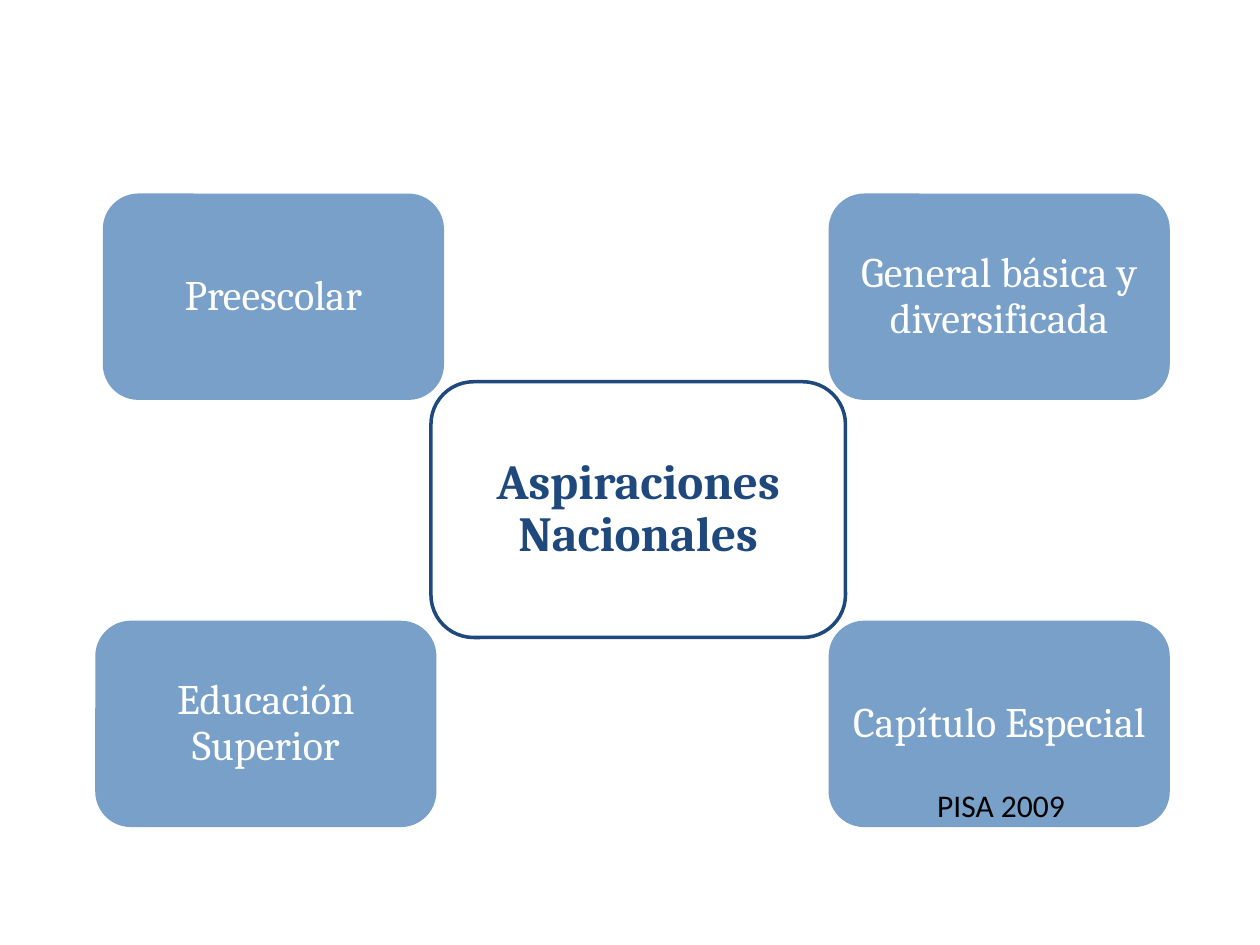
from pptx import Presentation
from pptx.dml.color import RGBColor
from pptx.enum import shapes, text
from pptx.util import Inches, Pt

COLORS = {"blue": "78A0C8", "navy": "1F497D", "white": "FFFFFF", "black": "000000"}
SIDE = {"size": (2.68, 1.61), "fill": "blue", "line": "blue", "inset": 0.1,
        "font": {"name": "Cambria", "size": Pt(24), "bold": False}, "ink": "white"}
CORE = {"size": (3.29, 2.03), "fill": None, "line": "navy", "inset": 0.12,
        "font": {"name": "Cambria", "size": Pt(28), "bold": True}, "ink": "navy"}
NOTE = {"font": {"name": "Calibri", "size": Pt(18)}, "ink": "black"}
TOP, LOW, RIGHT = 1.55, 4.94, 6.59
BOXES = [
    ("Preescolar", 0.83, TOP, SIDE),
    ("General básica y diversificada", RIGHT, TOP, SIDE),
    ("Educación Superior", 0.77, LOW, SIDE),
    ("Capítulo Especial", RIGHT, LOW, SIDE),
    ("Aspiraciones Nacionales", 3.42, 3.03, CORE),
]


def color(name):
    return RGBColor.from_string(COLORS[name])


def write(frame, words, style):
    frame.text = words
    para = frame.paragraphs[0]
    font = para.runs[0].font
    for key, value in style["font"].items():
        setattr(font, key, value)
    font.color.rgb = color(style["ink"])
    return para


def add_box(slide, words, left, top, style):
    box = slide.shapes.add_shape(
        shapes.MSO_SHAPE.ROUNDED_RECTANGLE,
        *map(Inches, (left, top, *style["size"])))
    box.shadow.inherit = False
    if style["fill"]:
        box.fill.solid()
        box.fill.fore_color.rgb = color(style["fill"])
    else:
        box.fill.background()
    box.line.color.rgb = color(style["line"])
    box.line.width = Pt(2)
    frame = box.text_frame
    frame.word_wrap = True
    frame.vertical_anchor = text.MSO_ANCHOR.MIDDLE
    for side in ("left", "top", "right", "bottom"):
        setattr(frame, "margin_" + side, Inches(style["inset"]))
    para = write(frame, words, style)
    para.alignment = text.PP_ALIGN.CENTER
    para.line_spacing = 0.9


def main():
    deck = Presentation()
    deck.slide_width, deck.slide_height = Inches(10), Inches(7.5)
    slide = deck.slides.add_slide(deck.slide_layouts[6])
    for item in BOXES:
        add_box(slide, *item)
    note = slide.shapes.add_textbox(*map(Inches, (7.34, 6.19, 1.26, 0.4)))
    note.text_frame.auto_size = text.MSO_AUTO_SIZE.SHAPE_TO_FIT_TEXT
    write(note.text_frame, "PISA 2009", NOTE)
    deck.save("out.pptx")


if __name__ == "__main__":
    main()
